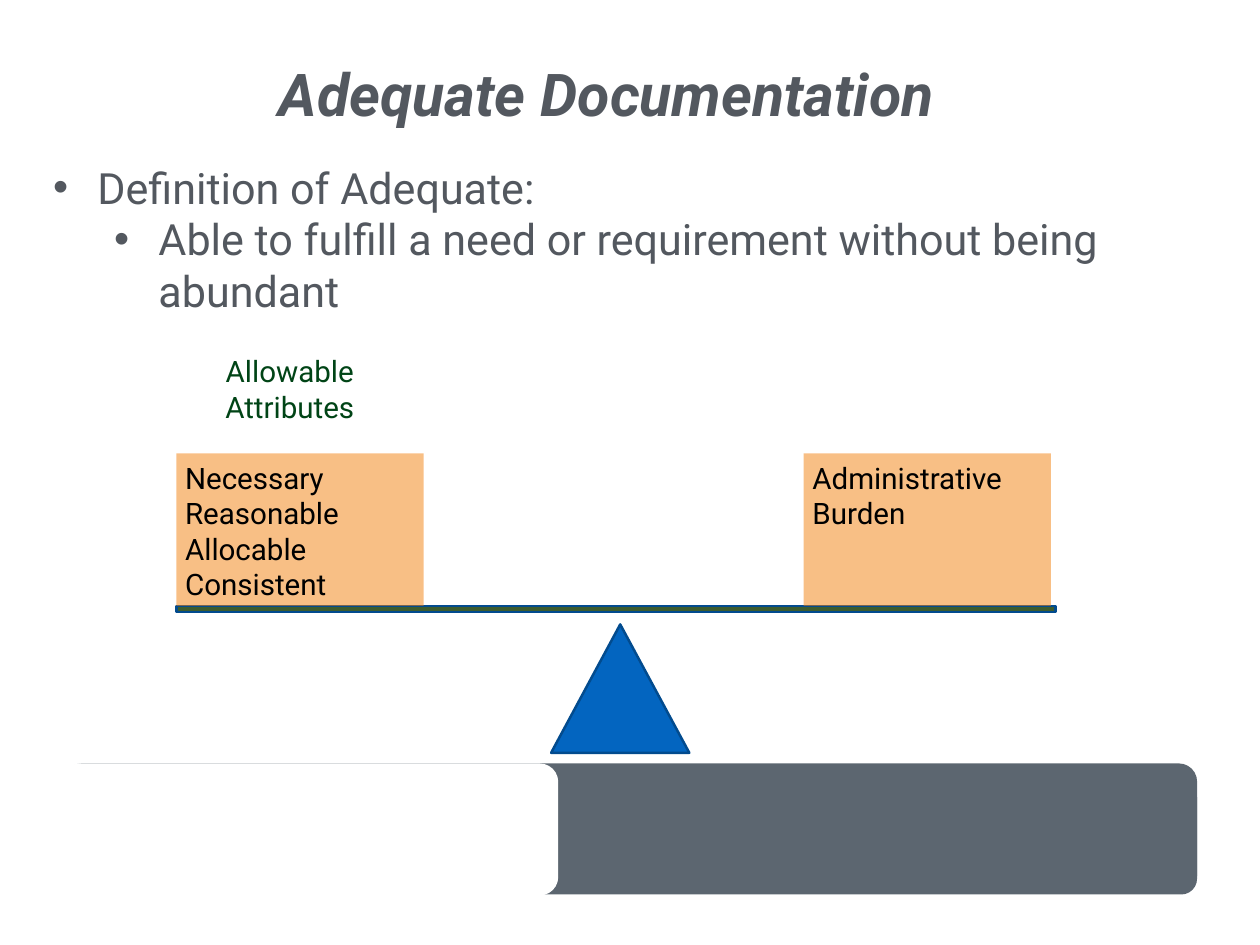
import pptx
import pptx.util
import pptx.dml.color
import pptx.enum.shapes
import pptx.enum.text
from lxml import etree

PX = 9144
SHAPES = pptx.enum.shapes.MSO_SHAPE
ALIGN = pptx.enum.text.PP_ALIGN
A = "{http://schemas.openxmlformats.org/drawingml/2006/main}"

deck = pptx.Presentation()
deck.slide_width = 1422 * PX
deck.slide_height = 1067 * PX
slide = deck.slides.add_slide(deck.slide_layouts[6])


def add_block(kind, box, fill=None, line=None):
    block = slide.shapes.add_shape(kind, *[side * PX for side in box])
    block.shadow.inherit = False
    if fill:
        block.fill.solid()
        block.fill.fore_color.rgb = pptx.dml.color.RGBColor.from_string(fill)
    else:
        block.fill.background()
    if line:
        block.line.color.rgb = pptx.dml.color.RGBColor.from_string(line)
        block.line.width = pptx.util.Pt(2)
    else:
        block.line.fill.background()
    return block


def write(block, lines, size, color, align=ALIGN.LEFT, bullet_indents=()):
    frame = block.text_frame
    frame.word_wrap = True
    frame.vertical_anchor = pptx.enum.text.MSO_ANCHOR.TOP
    frame.margin_left = frame.margin_right = 10 * PX
    frame.margin_top = frame.margin_bottom = 7 * PX
    frame.text = "\n".join(lines)
    for paragraph in frame.paragraphs:
        paragraph.alignment = align
    for paragraph, indent in zip(frame.paragraphs, bullet_indents):
        properties = paragraph._p.get_or_add_pPr()
        properties.set("marL", str(indent * PX))
        properties.set("indent", str(-50 * PX))
        etree.SubElement(properties, A + "buFont", typeface="Arial")
        etree.SubElement(properties, A + "buChar", char="•")
    for paragraph in frame.paragraphs:
        for run in paragraph.runs:
            run.font.name = "Roboto"
            run.font.size = pptx.util.Pt(size)
            run.font.color.rgb = pptx.dml.color.RGBColor.from_string(color)


for footer_box, footer_fill in [
    ((72, 862, 1279, 147), "5C6670"),
    ((554, 883, 797, 127), "5C6670"),
    ((69, 862, 561, 149), "FFFFFF"),
]:
    footer = add_block(SHAPES.ROUNDED_RECTANGLE, footer_box, footer_fill)
    footer.adjustments[0] = 0.14

definition = slide.shapes.add_textbox(50 * PX, 175 * PX, 1269 * PX, 533 * PX)
write(
    definition,
    [
        "Definition of Adequate:",
        "Able to fulfill a need or requirement without being abundant",
    ],
    35, "53585F", bullet_indents=(50, 119),
)
definition.text_frame.paragraphs[1].level = 2

title = slide.shapes.add_textbox(50 * PX, 58 * PX, 1269 * PX, 108 * PX)
write(title, ["Adequate Documentation"], 48, "53585F", ALIGN.CENTER)
title_font = title.text_frame.paragraphs[0].runs[0].font
title_font.bold = True
title_font.italic = True

add_block(SHAPES.FLOWCHART_PROCESS, (199, 684, 992, 7), "3D5C2E", "024B8E")
add_block(SHAPES.ISOSCELES_TRIANGLE, (622, 705, 156, 145), "0365C0", "024B8E")

for weight_left, weight_lines in [
    (199, ["Necessary", "Reasonable", "Allocable", "Consistent"]),
    (907, ["Administrative", "Burden"]),
]:
    weight = add_block(SHAPES.RECTANGLE, (weight_left, 512, 279, 172), "F3800D")
    weight_color = weight._element.spPr.find(A + "solidFill")[0]
    etree.SubElement(weight_color, A + "alpha", val="50000")
    write(weight, weight_lines, 24, "000000")

attributes = slide.shapes.add_textbox(210 * PX, 392 * PX, 234 * PX, 91 * PX)
write(attributes, ["Allowable Attributes"], 24, "004416", ALIGN.CENTER)

deck.save("out.pptx")
